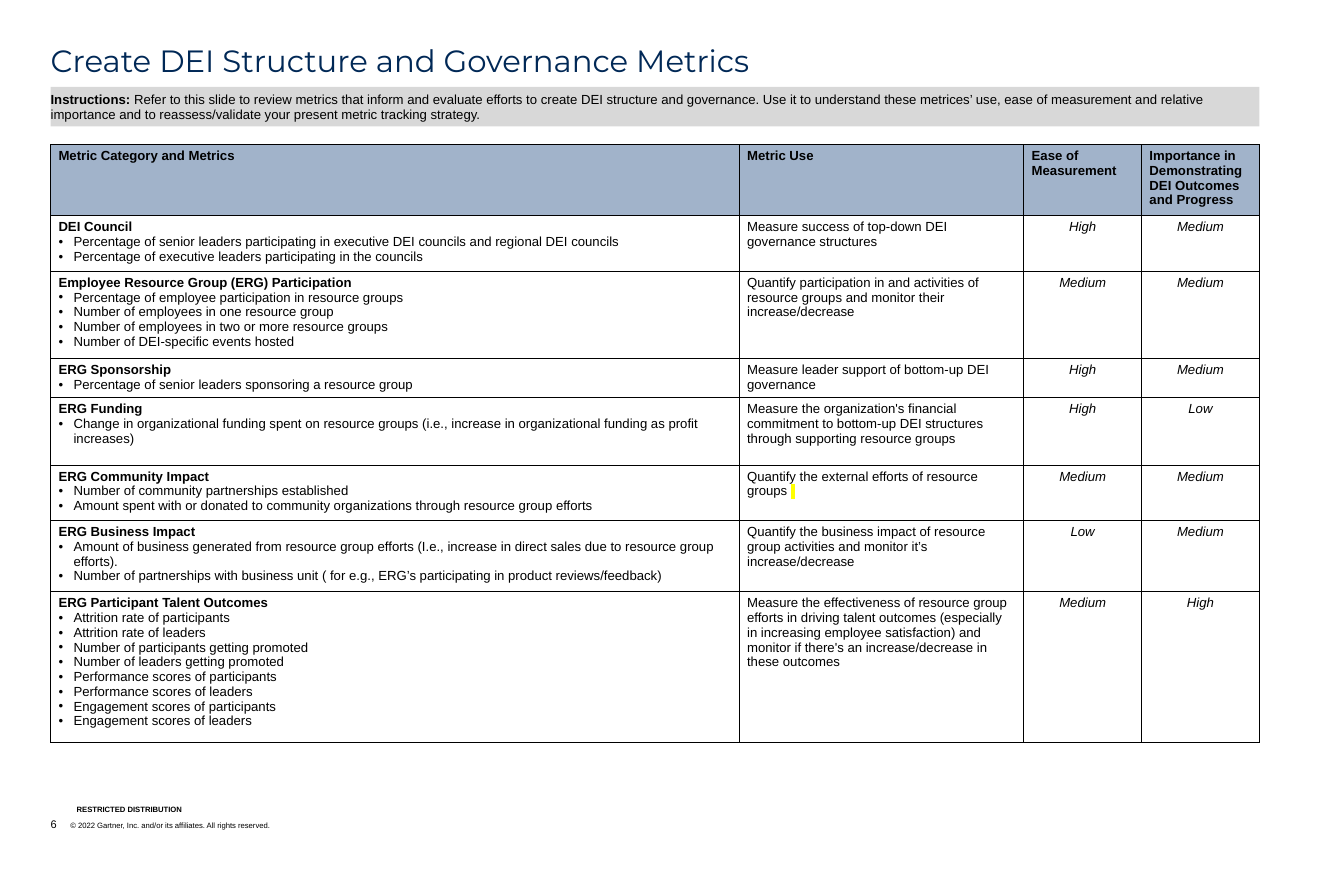
from pptx import Presentation
from pptx.dml.color import RGBColor
from pptx.enum.shapes import MSO_SHAPE as Shape
from pptx.enum.text import MSO_ANCHOR as Anchor, PP_ALIGN as Align
from pptx.oxml.ns import qn
from pptx.util import Inches, Pt
from lxml.etree import SubElement

LEFT, WIDTH = 0.64, 15.29
COLUMNS = [8.71, 3.6, 1.49, 1.49]
ROW_HEIGHTS = [0.85, 0.66, 1.03, 0.47, 0.85, 0.66, 0.85, 1.78]
HEADINGS = ["Metric Category and Metrics", "Metric Use", "Ease of Measurement",
            "Importance in Demonstrating DEI Outcomes and Progress"]

# Category, metrics, use, ease of measurement, importance
METRICS = [
    ("DEI Council",
     ["Percentage of senior leaders participating in executive DEI councils and regional DEI councils",
      "Percentage of executive leaders participating in the councils"],
     "Measure success of top-down DEI governance structures", "High", "Medium"),
    ("Employee Resource Group (ERG) Participation",
     ["Percentage of employee participation in resource groups",
      "Number of employees in one resource group",
      "Number of employees in two or more resource groups",
      "Number of DEI-specific events hosted"],
     "Quantify participation in and activities of resource groups and monitor their increase/decrease",
     "Medium", "Medium"),
    ("ERG Sponsorship",
     ["Percentage of senior leaders sponsoring a resource group"],
     "Measure leader support of bottom-up DEI governance", "High", "Medium"),
    ("ERG Funding",
     ["Change in organizational funding spent on resource groups (i.e., increase in "
      "organizational funding as profit increases)"],
     "Measure the organization's financial commitment to bottom-up DEI structures "
     "through supporting resource groups", "High", "Low"),
    ("ERG Community Impact",
     ["Number of community partnerships established",
      "Amount spent with or donated to community organizations through resource group efforts"],
     "Quantify the external efforts of resource groups ", "Medium", "Medium"),
    ("ERG Business Impact",
     ["Amount of business generated from resource group efforts (I.e., increase in direct "
      "sales due to resource group efforts).",
      "Number of partnerships with business unit ( for e.g., ERG’s participating in "
      "product reviews/feedback)"],
     "Quantify the business impact of resource group activities and monitor it’s increase/decrease",
     "Low", "Medium"),
    ("ERG Participant Talent Outcomes",
     ["Attrition rate of participants", "Attrition rate of leaders",
      "Number of participants getting promoted", "Number of leaders getting promoted",
      "Performance scores of participants", "Performance scores of leaders",
      "Engagement scores of participants", "Engagement scores of leaders"],
     "Measure the effectiveness of resource group efforts in driving talent outcomes "
     "(especially in increasing employee satisfaction) and monitor if there's an "
     "increase/decrease in these outcomes", "Medium", "High"),
]
MARKED_CATEGORY = "ERG Community Impact"


def rgb(value):
    return RGBColor.from_string(value)


class MetricsPage:
    font, ink, navy = "Arial", "000000", "002856"
    header_fill, banner_fill, marker = "A1B3CA", "D8D8D8", "FFFF00"

    def __init__(self, deck):
        self.page = deck.slides.add_slide(deck.slide_layouts[6])

    def style(self, para, size=12, bold=False, italic=False, color=None, font=None):
        para.font.size, para.font.bold, para.font.italic = Pt(size), bold, italic
        para.font.name = font or self.font
        para.font.color.rgb = rgb(color or self.ink)

    def indent(self, para, width):
        properties = para._p.get_or_add_pPr()
        properties.set("marL", str(Inches(width)))
        properties.set("indent", str(-Inches(width)))
        return properties

    def bullet(self, para):
        properties = self.indent(para, 0.19)
        SubElement(properties, qn("a:buFont"), typeface=self.font)
        SubElement(properties, qn("a:buChar"), char="•")

    def highlight(self, span):
        span.font.color.rgb = rgb(self.ink)
        mark = SubElement(span._r.get_or_add_rPr(), qn("a:highlight"))
        SubElement(mark, qn("a:srgbClr"), val=self.marker)

    def text(self, left, top, width, height, anchor=Anchor.TOP):
        box = self.page.shapes.add_textbox(*map(Inches, (left, top, width, height)))
        frame = box.text_frame
        frame.word_wrap, frame.vertical_anchor = True, anchor
        frame.margin_left = frame.margin_right = frame.margin_top = frame.margin_bottom = 0
        return frame.paragraphs[0]

    def banner(self, top, height, label, body):
        box = self.page.shapes.add_shape(
            Shape.RECTANGLE, *map(Inches, (LEFT, top, WIDTH, height)))
        box.shadow.inherit = False
        box.fill.solid()
        box.fill.fore_color.rgb = rgb(self.banner_fill)
        box.line.fill.background()
        frame = box.text_frame
        frame.word_wrap = True
        frame.margin_left = frame.margin_right = 0
        para = frame.paragraphs[0]
        para.alignment = Align.LEFT
        self.style(para)
        for words, bold in ((label, True), (body, False)):
            span = para.add_run()
            span.text, span.font.bold = words, bold

    def table(self, top):
        frame = self.page.shapes.add_table(
            len(ROW_HEIGHTS), len(COLUMNS),
            *map(Inches, (LEFT, top, WIDTH, sum(ROW_HEIGHTS))))
        grid = frame.table
        grid.first_row = grid.horz_banding = False
        for column, width in zip(grid.columns, COLUMNS):
            column.width = Inches(width)
        for row, height in zip(grid.rows, ROW_HEIGHTS):
            row.height = Inches(height)
        return grid

    def cell(self, cell, words, fill=None, align=Align.LEFT, **look):
        properties = cell._tc.get_or_add_tcPr()
        for side in ("lnL", "lnR", "lnT", "lnB"):
            line = SubElement(properties, qn(f"a:{side}"), w=str(Pt(1)))
            SubElement(SubElement(line, qn("a:solidFill")), qn("a:srgbClr"), val=self.ink)
        if fill:
            cell.fill.solid()
            cell.fill.fore_color.rgb = rgb(fill)
        else:
            cell.fill.background()
        para = cell.text_frame.paragraphs[0]
        para.text, para.alignment = words, align
        self.style(para, **look)
        return para


def main():
    deck = Presentation()
    deck.slide_width, deck.slide_height = Inches(17), Inches(11)
    sheet = MetricsPage(deck)

    # Title and instructions
    title = sheet.text(LEFT, 0.58, 15.72, 0.72)
    title.text, title.line_spacing = "Create DEI Structure and Governance Metrics", 0.9
    sheet.style(title, 28, color=sheet.navy, font="Montserrat")
    sheet.banner(1.1, 0.5, "Instructions: ",
                 "Refer to this slide to review metrics that inform and evaluate efforts to create "
                 "DEI structure and governance. Use it to understand these metrices’ use, ease of "
                 "measurement and relative importance and to reassess/validate your present metric "
                 "tracking strategy.")

    # Metrics table
    grid = sheet.table(1.83)
    for column, heading in enumerate(HEADINGS):
        sheet.cell(grid.cell(0, column), heading, sheet.header_fill, bold=True)
    for row, (category, metrics, use, *ratings) in enumerate(METRICS, 1):
        first = grid.cell(row, 0)
        sheet.cell(first, category, bold=True)
        for metric in metrics:
            para = first.text_frame.add_paragraph()
            para.text = metric
            sheet.bullet(para)
            sheet.style(para)
        purpose = sheet.cell(grid.cell(row, 1), use)
        if category == MARKED_CATEGORY:
            span = purpose.add_run()
            span.text = " "
            sheet.highlight(span)
        for column, rating in enumerate(ratings, 2):
            sheet.cell(grid.cell(row, column), rating, align=Align.CENTER, italic=True)

    # Footer
    notice = sheet.text(0.97, 10.18, 3.23, 0.11, Anchor.BOTTOM)
    notice.text, notice.line_spacing = "RESTRICTED DISTRIBUTION", 0.9
    sheet.style(notice, 7, bold=True)
    footer = sheet.text(LEFT, 10.33, 10.19, 0.17, Anchor.BOTTOM)
    sheet.indent(footer, 0.25)
    sheet.style(footer, 10)
    for words, size in (("6", 10),
                        ("\t© 2022 Gartner, Inc. and/or its affiliates. All rights reserved.", 7)):
        span = footer.add_run()
        span.text, span.font.size = words, Pt(size)

    deck.save("out.pptx")


if __name__ == "__main__":
    main()
